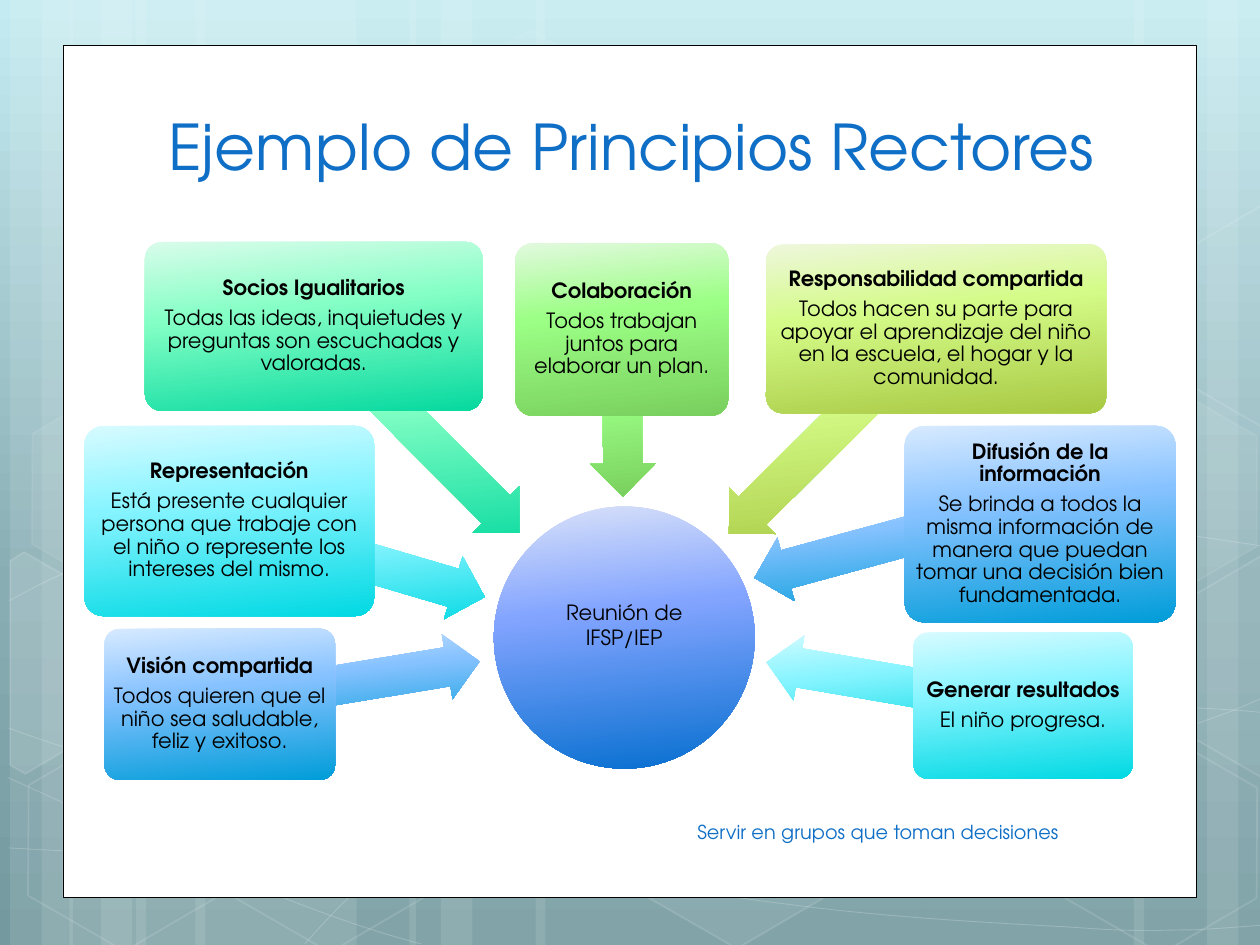
import math

import copy

import pptx
import pptx.dml.color
import pptx.enum.shapes
import pptx.enum.text
import pptx.oxml
import pptx.oxml.ns
import pptx.util

Inches = pptx.util.Inches
Pt = pptx.util.Pt
RGBColor = pptx.dml.color.RGBColor
Shape = pptx.enum.shapes.MSO_SHAPE
Anchor = pptx.enum.text.MSO_ANCHOR
Align = pptx.enum.text.PP_ALIGN
qn = pptx.oxml.ns.qn

FONT = "TeX Gyre Adventor"
WHITE = RGBColor(0xFF, 0xFF, 0xFF)
BLACK = RGBColor(0, 0, 0)
BLUE = RGBColor(0x0F, 0x6F, 0xC6)


def gradient(first, middle, last, position=40):
    return [(0, RGBColor.from_string(first)), (position, RGBColor.from_string(middle)),
            (100, RGBColor.from_string(last))]


BACKGROUND = gradient("C4EBF1", "88ADB3", "749AA0", 62)
INDIGO = gradient("DAE2F9", "82A4FF", "066FCF")
SKY = gradient("D7EAFF", "86C2FF", "009DD9")
CYAN = gradient("D7FBFF", "86F4FF", "01D9E3")
MINT = gradient("D9FCEB", "84FFC5", "06D99F")
GREEN = gradient("E2F9DE", "9CFF86", "79CF5D")
LIME = gradient("EEF7DC", "D4FB87", "A8C843")

# left and width of the full-height background bands
BANDS = [(1.08, 1.75), (0.08, 0.5), (0.33, 0.83), (1.55, 1.75), (0.55, 0.5), (0.8, 0.83),
         (7.33, 1.75), (9.58, 0.5), (9, 0.83), (4.25, 3.08), (3.25, 0.5), (3.5, 0.83)]

# Bezier points: a start, then two controls and an end for each segment
CURVES = [
    [(0.07, 6.73), (0.61, 6.76), (1.15, 6.79), (1.9, 6.78), (2.65, 6.77), (3.58, 6.75),
     (4.58, 6.65), (5.58, 6.55), (7, 6.36), (7.92, 6.17), (8.83, 5.98), (9.77, 5.68),
     (10.07, 5.51)],
    [(0.07, 4.77), (0.36, 4.61), (0.65, 4.46), (1.21, 4.31), (1.78, 4.16), (2.59, 3.94),
     (3.47, 3.87), (4.36, 3.8), (5.44, 3.79), (6.54, 3.87), (7.64, 3.95), (9.47, 4.26),
     (10.07, 4.34)],
    [(0.06, 6.17), (1.27, 6.72), (2.47, 7.27), (3.34, 7.49)],
    [(0.07, 5.78), (0.38, 5.89), (0.7, 6), (1.28, 6.16), (1.86, 6.31), (2.73, 6.56),
     (3.57, 6.73), (4.4, 6.9), (5.45, 7.08), (6.28, 7.18), (7.11, 7.29), (8, 7.33),
     (8.53, 7.36), (9.05, 7.4), (9.19, 7.38), (9.45, 7.38), (9.71, 7.37), (9.89, 7.35),
     (10.07, 7.34)],
    [(2.42, 7.49), (2.6, 7.29), (2.78, 7.09), (3.02, 6.91), (3.26, 6.73), (3.6, 6.53),
     (3.88, 6.39), (4.16, 6.25), (4.33, 6.19), (4.7, 6.09), (5.06, 5.99), (5.73, 5.85),
     (6.08, 5.78), (6.44, 5.71), (6.49, 5.71), (6.8, 5.69), (7.11, 5.66), (7.6, 5.63),
     (7.94, 5.62), (8.29, 5.61), (8.86, 5.62), (8.86, 5.62), (9.1, 5.62), (9.3, 5.62),
     (9.53, 5.62), (9.71, 5.63), (9.88, 5.64), (10.06, 5.66)],
]

# left, top, fill opacity, line opacity
HEXAGONS = [(3.34, 0.36, 4, 8), (4.97, 5.89, 6, 12), (0.11, 5.91, 0, 12), (0.14, 3.12, 7, 8),
            (1.74, 5.92, 0, 12), (7.53, 4.53, 10, 12), (8.34, 5.93, 0, 12), (8.34, 3.14, 7, 8)]

# hexagons cut by the slide edge: points, centre of rotation, fill opacity
CUT_HEXAGONS = [
    ([(0.08, 4.45), (0.19, 4.38), (0.96, 4.82), (0.95, 5.7), (0.2, 6.14), (0.08, 6.07)],
     (0.36, 5.35), 10),
    ([(9.26, 4.85), (10.01, 4.41), (10.09, 4.46), (10.09, 6.13), (10.02, 6.17), (9.26, 5.73)],
     (9.85, 5.2), 4),
    ([(9.26, 2.07), (10.01, 1.63), (10.1, 1.68), (10.09, 3.35), (10.02, 3.39), (9.26, 2.95)],
     (9.85, 2.41), 0),
]

# colours, heading, text, box, arrow left/top/width, arrow rotation
PRINCIPLES = [
    (SKY, "Visión compartida", "Todos quieren que el niño sea saludable, feliz y exitoso.",
     (0.83, 4.99, 1.83, 1.2), (1.73, 5.16, 2.09), 170.6),
    (CYAN, "Representación", "Está presente cualquier persona que trabaje con el niño o "
     "represente los intereses del mismo.", (0.67, 3.38, 2.3, 1.51), (1.78, 4.18, 2.11), 196.4),
    (MINT, "Socios Igualitarios", "Todas las ideas, inquietudes y preguntas son escuchadas "
     "y valoradas.", (1.15, 1.92, 2.68, 1.34), (2.15, 3.15, 2.31), 225.1),
    (GREEN, "Colaboración", "Todos trabajan juntos para elaborar un plan.",
     (4.09, 1.93, 1.69, 1.37), (4.28, 3.02, 1.32), 269.6),
    (LIME, "Responsabilidad compartida", "Todos hacen su parte para apoyar el aprendizaje del "
     "niño en la escuela, el hogar y la comunidad.",
     (6.08, 1.94, 2.7, 1.34), (5.45, 3.16, 2.32), 315.3),
    (SKY, "Difusión de la información", "Se brinda a todos la misma información de manera que "
     "puedan tomar una decisión bien fundamentada.",
     (7.18, 3.38, 2.15, 1.56), (5.95, 4.05, 2.11), 344.8),
    (CYAN, "Generar resultados", "El niño progresa.",
     (7.25, 5.02, 1.74, 1.16), (6.07, 5.17, 2.06), 9.7),
]


def turn_back(points, center, degrees):
    """Undo a clockwise rotation of points about a centre."""
    cosine, sine = math.cos(math.radians(degrees)), math.sin(math.radians(degrees))
    offsets = [(x - center[0], y - center[1]) for x, y in points]
    return [(center[0] + x * cosine + y * sine, center[1] - x * sine + y * cosine)
            for x, y in offsets]


def set_gradient(fill, stops, angle):
    """Fill with any number of stops; the angle is clockwise and fixed to the slide."""
    fill.gradient()
    fill.gradient_angle = 360 - angle
    first = fill.gradient_stops[0]
    stop_list = first._gs.getparent()
    stop_list.getparent().set("rotWithShape", "0")
    while len(stop_list) < len(stops):
        stop_list.append(copy.deepcopy(first._gs))
    for stop, (position, color) in zip(fill.gradient_stops, stops):
        stop.position = position / 100
        stop.color.rgb = color


def set_opacity(solid_fill, percent):
    solid_fill.find(qn("a:srgbClr")).append(pptx.oxml.parse_xml(
        f'<a:alpha {pptx.oxml.ns.nsdecls("a")} val="{percent * 1000}"/>'))


class SlideBuilder:
    def __init__(self, slide):
        self.slide = slide
        self.shapes = slide.shapes

    def shape(self, kind, left, top, width, height, rotation=0, adjustments=()):
        shape = self.shapes.add_shape(kind, *map(Inches, (left, top, width, height)))
        shape.shadow.inherit = False
        shape.rotation = rotation
        for index, value in enumerate(adjustments):
            shape.adjustments[index] = value
        shape.line.fill.background()
        return shape

    def gradient_shape(self, stops, *geometry):
        shape = self.shape(*geometry)
        set_gradient(shape.fill, stops, 84)
        return shape

    def veil(self, shape, fill_opacity=0, line_opacity=0, line_width=1):
        """Give a shape a translucent white fill and line."""
        shape.shadow.inherit = False
        properties = shape.element.spPr
        shape.fill.background()
        if fill_opacity:
            shape.fill.solid()
            shape.fill.fore_color.rgb = WHITE
            set_opacity(properties.find(qn("a:solidFill")), fill_opacity)
        if line_opacity:
            shape.line.color.rgb = WHITE
            shape.line.width = Pt(line_width)
            set_opacity(properties.find(qn("a:ln")).find(qn("a:solidFill")), line_opacity)

    def outline(self, points, close):
        points = [(Inches(x), Inches(y)) for x, y in points]
        builder = self.shapes.build_freeform(*points[0])
        builder.add_line_segments(points[1:], close=close)
        return builder.convert_to_shape()

    def curve(self, points):
        """Draw an outline whose every three points form one Bezier segment."""
        shape = self.outline(points, False)
        lines = list(shape.element.spPr.iter(qn("a:lnTo")))
        for first, second, third in zip(lines[::3], lines[1::3], lines[2::3]):
            first.tag = qn("a:cubicBezTo")
            for line in (second, third):
                first.append(line[0])
                line.getparent().remove(line)
        return shape

    def text(self, shape, lines, size, color, anchor=Anchor.MIDDLE, inset=None):
        frame = shape.text_frame
        frame.word_wrap = True
        frame.vertical_anchor = anchor
        if inset is not None:
            frame.margin_left = frame.margin_right = Inches(inset)
            frame.margin_top = frame.margin_bottom = Inches(inset)
        frame.text = "\n".join(lines)
        for paragraph in frame.paragraphs:
            paragraph.alignment = Align.CENTER
            paragraph.font.name = FONT
            paragraph.font.size = Pt(size)
            paragraph.font.color.rgb = color
        return frame

    def title(self, text, *box):
        title = self.shapes.title
        title.left, title.top, title.width, title.height = map(Inches, box)
        self.text(title, [text], 36, BLUE, Anchor.BOTTOM)

    def caption(self, text, *box):
        self.text(self.shapes.add_textbox(*map(Inches, box)), [text], 11, BLUE)

    def backdrop(self):
        """Draw the decoration and hand it over to the slide layout."""
        set_gradient(self.slide.background.fill, BACKGROUND, 90)
        for left, width in BANDS:
            self.veil(self.shape(Shape.RECTANGLE, left, 0, width, 7.5), 10)
        for points in CURVES:
            self.veil(self.curve(points), 0, 20, 0.5)
        for left, top, fill, line in HEXAGONS:
            self.veil(self.shape(Shape.HEXAGON, left, top, 1.75, 1.52, 30, (0.285, 1.155)),
                      fill, line)
        for points, center, fill in CUT_HEXAGONS:
            hexagon = self.outline(turn_back(points, center, 30), True)
            hexagon.rotation = 30
            self.veil(hexagon, fill, 12)
        panel = self.shape(Shape.RECTANGLE, 0.5, 0.36, 9, 6.76)
        panel.fill.solid()
        panel.fill.fore_color.rgb = WHITE
        panel.line.color.rgb = BLACK
        panel.line.width = Pt(0.5)
        decoration = [shape for shape in self.shapes if not shape.is_placeholder]
        for number, shape in enumerate(decoration, 100):
            next(shape.element.iter(qn("p:cNvPr"))).set("id", str(number))
            self.slide.slide_layout.shapes.element.append(shape.element)

    def hub(self, text, *box):
        circle = self.gradient_shape(INDIGO, Shape.OVAL, *box)
        frame = self.text(circle, [text], 12, BLACK, inset=0.01)
        frame.margin_bottom = Inches(0.21)

    def principle(self, stops, heading, text, box, arrow, rotation):
        self.gradient_shape(stops, Shape.LEFT_ARROW, *arrow, 0.52, rotation, (0.6, 0.5))
        card = self.gradient_shape(stops, Shape.ROUNDED_RECTANGLE, *box, 0, (0.1,))
        frame = self.text(card, [heading, text], 12, BLACK, inset=0.03)
        frame.paragraphs[0].font.bold = True
        for paragraph in frame.paragraphs:
            paragraph.line_spacing = 0.9
            paragraph.space_after = Pt(4.2)


def main():
    presentation = pptx.Presentation()
    presentation.slide_width, presentation.slide_height = Inches(10), Inches(7.5)
    builder = SlideBuilder(presentation.slides.add_slide(presentation.slide_layouts[5]))
    builder.backdrop()
    builder.title("Ejemplo de Principios Rectores", 1.17, 0.5, 7.68, 1)
    builder.caption("Servir en grupos que toman decisiones", 5.03, 6.4, 3.88, 0.4)
    builder.hub("Reunión de IFSP/IEP", 3.92, 4.02, 2.07, 2.08)
    for principle in PRINCIPLES:
        builder.principle(*principle)
    presentation.save("out.pptx")


if __name__ == "__main__":
    main()
